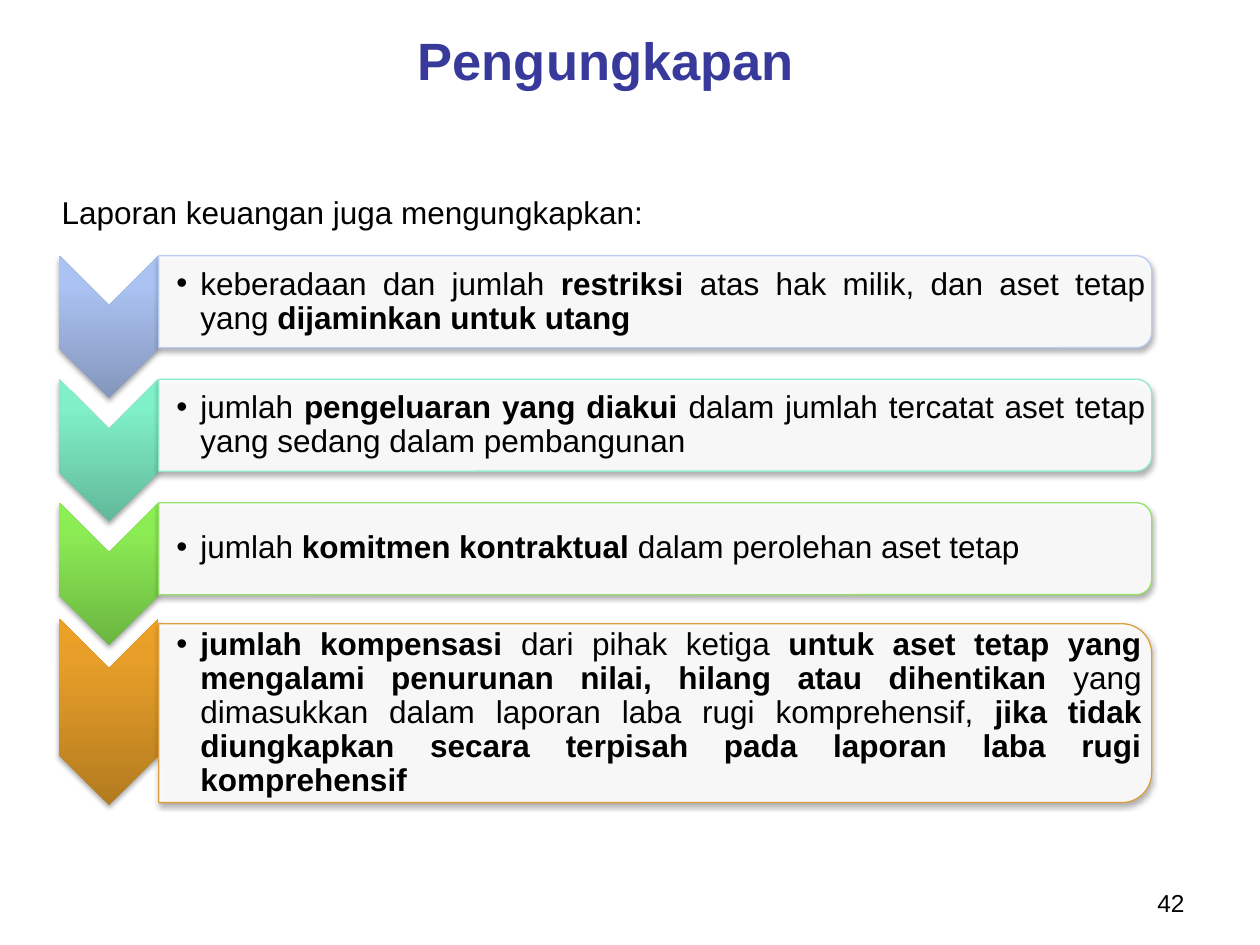
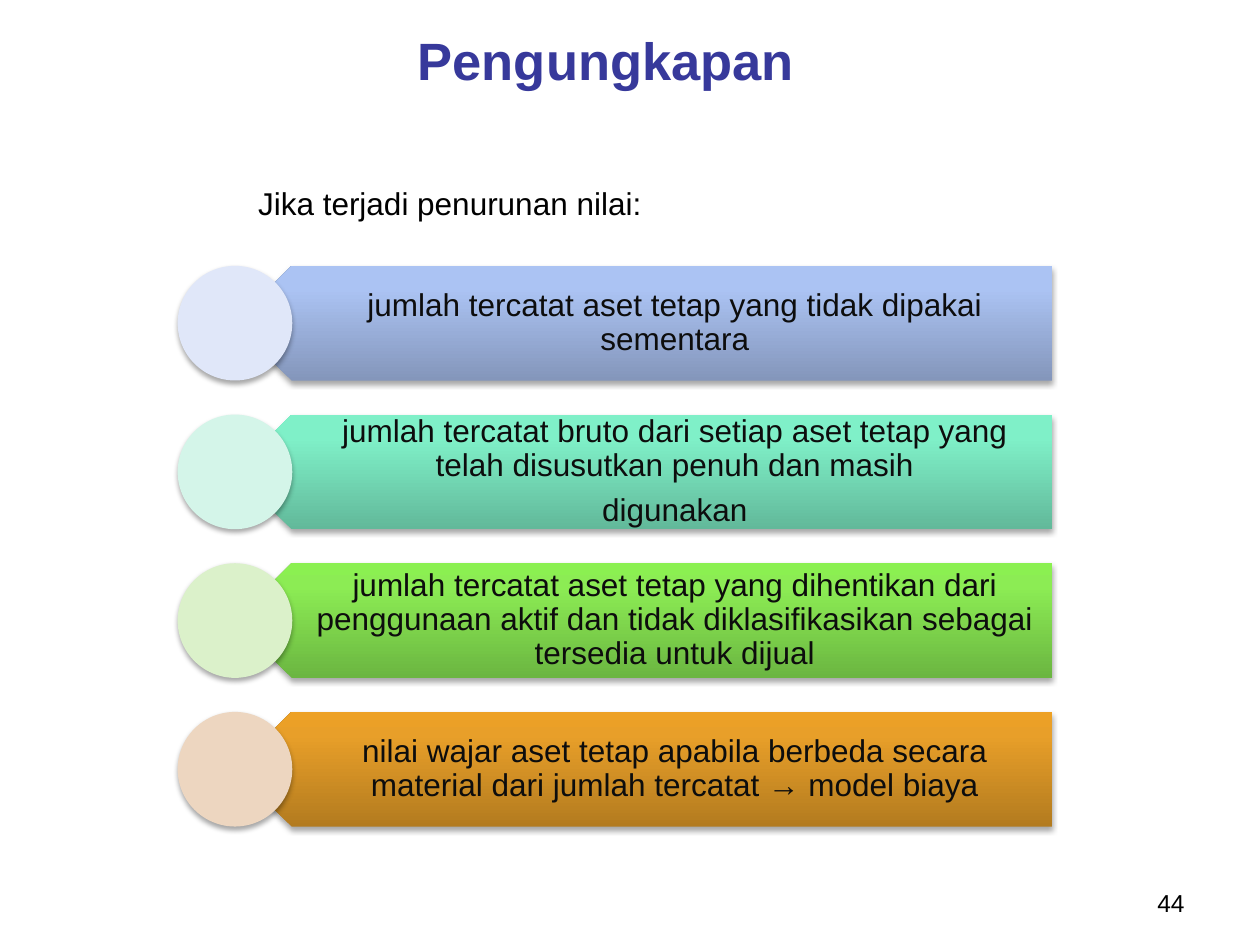
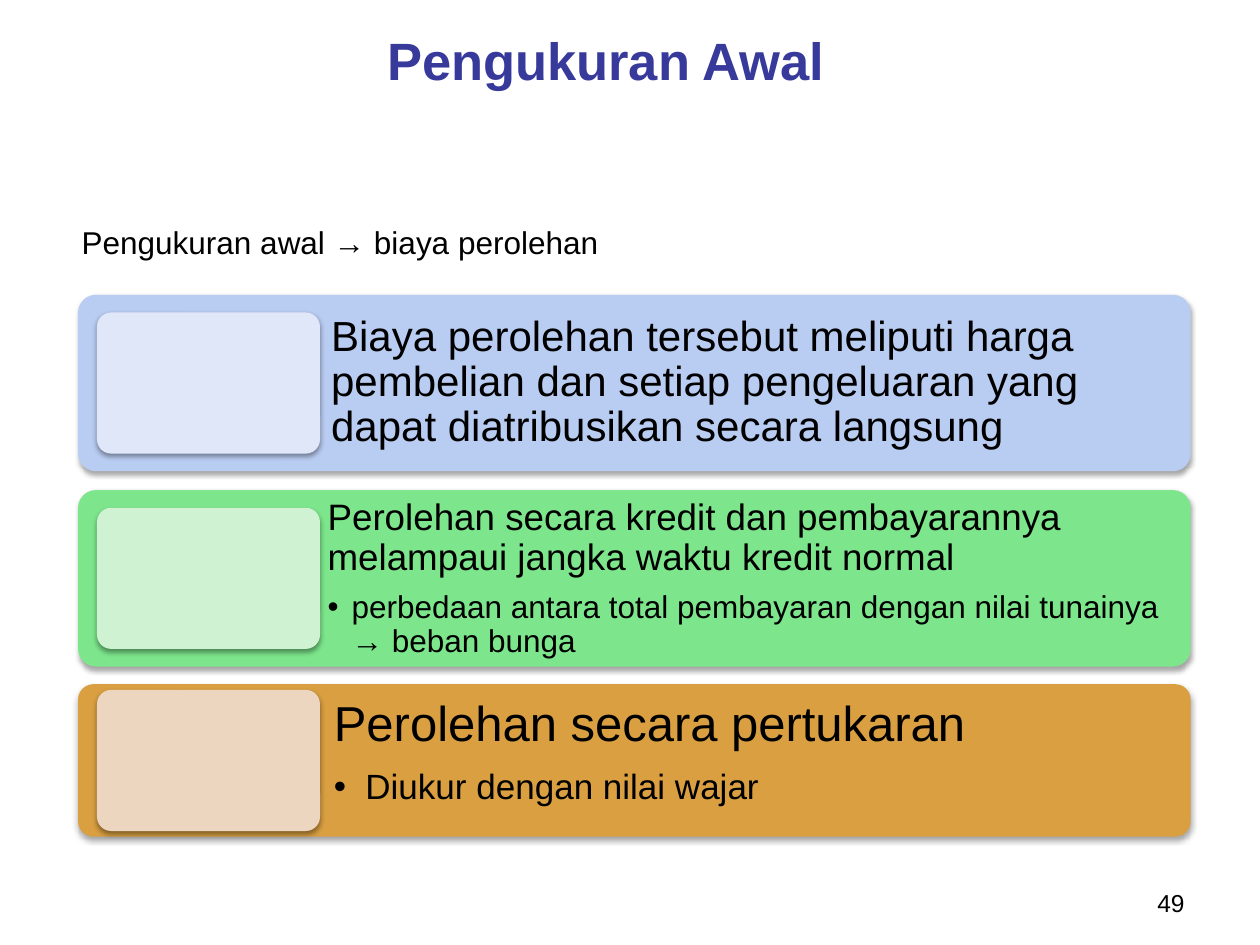
from lxml import etree
from pptx import Presentation
from pptx.dml.color import RGBColor
from pptx.enum.shapes import MSO_SHAPE
from pptx.enum.text import MSO_ANCHOR, MSO_AUTO_SIZE, PP_ALIGN
from pptx.oxml.ns import qn
from pptx.util import Inches, Pt

CHEVRON = MSO_SHAPE.CHEVRON
PANEL = MSO_SHAPE.ROUND_2_SAME_RECTANGLE
PENTAGON = MSO_SHAPE.PENTAGON
OVAL = MSO_SHAPE.OVAL
ROUNDED = MSO_SHAPE.ROUNDED_RECTANGLE
LEFT, CENTER, RIGHT, JUSTIFY = PP_ALIGN.LEFT, PP_ALIGN.CENTER, PP_ALIGN.RIGHT, PP_ALIGN.JUSTIFY
TOP, MIDDLE = MSO_ANCHOR.TOP, MSO_ANCHOR.MIDDLE
GROW = MSO_AUTO_SIZE.SHAPE_TO_FIT_TEXT

# Colours
FONT = "Arial"
BLACK = RGBColor(0, 0, 0)
WHITE = RGBColor(255, 255, 255)
INK = RGBColor(0x0D, 0x0D, 0x0D)
TITLE_BLUE = RGBColor(0x37, 0x39, 0x9B)
BLUE, MINT, LIME, ORANGE = [RGBColor.from_string(code) for code in
                            ("B9CCF2", "91EACB", "95E269", "D99F41")]
GREEN = RGBColor(0x7D, 0xE6, 0x8C)
PALE_BLUE, PALE_MINT, PALE_LIME, PALE_ORANGE = [
    RGBColor.from_string(code) for code in ("E0E7F9", "D4F5E9", "DBF1CA", "EDD6C0")]
PALE_GREEN = RGBColor(0xCF, 0xF3, 0xD2)
LINES = [BLUE, MINT, LIME, ORANGE]
PALES = [PALE_BLUE, PALE_MINT, PALE_LIME, PALE_ORANGE]

# Gradient colours from bottom to top
GRADIENT_STOPS = (0, 80, 100)
GRADIENTS = [
    [RGBColor.from_string(code) for code in codes] for codes in (
        ("8496BB", "ABC3F3", "AAC3F5"), ("62B99A", "7FF0C8", "7EF3CA"),
        ("6BB641", "8CEC54", "8BF051"), ("B37B1F", "E89F29", "EDA125"))]

SOFT_SHADOW = {"opacity": 35, "distance": 1.8}
TILE_SHADOW = {"opacity": 38, "distance": 1.6}

# Texts; words between asterisks are bold
DISCLOSURES = [
    "keberadaan dan jumlah *restriksi *atas hak milik, dan aset tetap yang "
    "*dijaminkan untuk utang*",
    "jumlah *pengeluaran yang diakui *dalam jumlah tercatat aset tetap yang "
    "sedang dalam pembangunan",
    "jumlah *komitmen kontraktual *dalam perolehan aset tetap",
    "*jumlah kompensasi *dari pihak ketiga *untuk aset tetap yang mengalami "
    "penurunan nilai, hilang atau dihentikan *yang dimasukkan dalam laporan laba "
    "rugi komprehensif, *jika tidak diungkapkan secara terpisah pada laporan laba "
    "rugi komprehensif*",
]
IMPAIRMENTS = [
    ["jumlah tercatat aset tetap yang tidak dipakai sementara"],
    ["jumlah tercatat bruto dari setiap aset tetap yang telah disusutkan penuh dan masih",
     "digunakan"],
    ["jumlah tercatat aset tetap yang dihentikan dari penggunaan aktif dan tidak "
     "diklasifikasikan sebagai tersedia untuk dijual"],
    ["nilai wajar aset tetap apabila berbeda secara material dari jumlah tercatat "
     "→ model biaya"],
]


def add_child(parent, tag, **attributes):
    child = etree.SubElement(parent, qn(tag))
    for name, value in attributes.items():
        child.set(name, str(value))
    return child


def add_shadow(shape, opacity, distance):
    effects = add_child(shape._element.spPr, "a:effectLst")
    shadow = add_child(effects, "a:outerShdw", blurRad=Pt(3.1), dist=Pt(distance),
                       dir=90 * 60000, rotWithShape=0)
    color = add_child(shadow, "a:srgbClr", val=BLACK)
    add_child(color, "a:alpha", val=opacity * 1000)


def fill_gradient(shape, colors):
    properties = shape._element.spPr
    gradient = etree.Element(qn("a:gradFill"), rotWithShape="0")
    stops = add_child(gradient, "a:gsLst")
    for position, color in zip(GRADIENT_STOPS, colors):
        stop = add_child(stops, "a:gs", pos=position * 1000)
        add_child(stop, "a:srgbClr", val=color)
    add_child(gradient, "a:lin", ang=270 * 60000, scaled=0)
    properties.find(qn("a:prstGeom")).addnext(gradient)


def add_figure(slide, kind, box, fill, rotation=0, line=None, shadow=SOFT_SHADOW):
    """Draw a shape that covers box (left, top, width, height) once rotated."""
    left, top, width, height = box
    if rotation == 90:
        left, top = left + (width - height) / 2, top + (height - width) / 2
        width, height = height, width
    shape = slide.shapes.add_shape(kind, Inches(left), Inches(top),
                                   Inches(width), Inches(height))
    shape.rotation = rotation
    if isinstance(fill, list):
        fill_gradient(shape, fill)
    else:
        shape.fill.solid()
        shape.fill.fore_color.rgb = fill
    if line is None:
        shape.line.fill.background()
    else:
        shape.line.color.rgb = line
        shape.line.width = Pt(0.75)
    add_shadow(shape, **shadow)
    return shape


def add_text_box(slide, box, insets=(0.1, 0.05, 0.1, 0.05), **formats):
    text_box = slide.shapes.add_textbox(*[Inches(length) for length in box])
    frame = text_box.text_frame
    sides = ("margin_left", "margin_top", "margin_right", "margin_bottom")
    values = dict(zip(sides, [Inches(inset) for inset in insets]))
    for name, value in {"word_wrap": True, **values, **formats}.items():
        setattr(frame, name, value)
    return frame


def add_paragraph(frame, text, size=18, color=BLACK, bold=False, indent=0, **formats):
    first = frame.paragraphs[0]
    paragraph = frame.add_paragraph() if first.runs else first
    if indent:
        paragraph.level = 1
        properties = paragraph._p.get_or_add_pPr()
        properties.set("marL", str(Inches(indent)))
        properties.set("indent", str(-Inches(indent)))
        add_child(properties, "a:buFont", typeface=FONT)
        add_child(properties, "a:buChar", char="•")
    for name, value in formats.items():
        setattr(paragraph, name, value)
    for index, part in enumerate(text.split("*")):
        if part:
            run = paragraph.add_run()
            run.text = part
            run.font.color.rgb = color
            values = {"name": FONT, "size": Pt(size), "bold": bold or index % 2 == 1}
            for name, value in values.items():
                setattr(run.font, name, value)


def add_body(frame, text, size=18, after=0.35, **formats):
    """Add a tight paragraph; after is the gap below it as a share of its size."""
    add_paragraph(frame, text, size, line_spacing=0.9, space_after=Pt(size * after), **formats)


def add_page(presentation, title, number, intro, intro_box):
    slide = presentation.slides.add_slide(presentation.slide_layouts[6])
    frame = add_text_box(slide, (0.31, 0.16, 9, 0.62), vertical_anchor=MIDDLE)
    add_paragraph(frame, title, 30, TITLE_BLUE, True, alignment=CENTER)
    frame = add_text_box(slide, (7.17, 7, 2.33, 0.35))
    add_paragraph(frame, number, 14, alignment=RIGHT)
    frame = add_text_box(slide, intro_box, auto_size=GROW)
    add_paragraph(frame, intro)
    return slide


def add_disclosure(slide, text, colors, line, chevron, panel, padding):
    """Place a down chevron and a panel, each given as (top, height)."""
    add_figure(slide, CHEVRON, (0.47, chevron[0], 0.79, chevron[1]), colors, 90)
    top, height = panel
    shape = add_figure(slide, PANEL, (1.26, top, 7.88, height), WHITE, 90, line)
    white = shape._element.spPr.find(qn("a:solidFill"))[0]
    add_child(white, "a:alpha", val=90000)
    frame = add_text_box(
        slide, (1.26, top + padding, 7.88 - padding, height - 2 * padding),
        (0.14, 0.01, 0.01, 0.01), vertical_anchor=MIDDLE)
    add_body(frame, text, after=0.15, indent=0.19, alignment=JUSTIFY)


def add_banner(slide, top, texts, colors, pale):
    size = 0.91
    add_figure(slide, PENTAGON, (1.86, top, 6.49, size), colors, 180)
    frame = add_text_box(slide, (2.09, top, 6.27, size), (0.4, 0.07, 0.14, 0.07),
                         vertical_anchor=MIDDLE)
    for text in texts:
        add_body(frame, text, color=INK, alignment=CENTER)
    add_figure(slide, OVAL, (1.41, top, size, size), pale)


def add_card(slide, top, height, color, pale, inset, anchor, heading, size, detail=None):
    """Place a card; detail is (text, size, indent) of the bullet below the heading."""
    tile_height = 1.12
    card = add_figure(slide, ROUNDED, (0.62, top, 8.83, height), color)
    frame = add_text_box(slide, (2.53, top, 6.92, height), (inset,) * 4,
                         vertical_anchor=anchor)
    add_body(frame, heading, size, alignment=LEFT)
    if detail:
        text, detail_size, indent = detail
        add_body(frame, text, detail_size, 0.15, indent=indent, alignment=LEFT)
    tile_top = top + (height - tile_height) / 2
    tile = add_figure(slide, ROUNDED, (0.77, tile_top, 1.77, tile_height), pale,
                      shadow=TILE_SHADOW)
    for shape in (card, tile):
        shape.adjustments[0] = 0.1


def main():
    presentation = Presentation()
    presentation.slide_width = Inches(10)
    presentation.slide_height = Inches(7.5)

    # Disclosures: three equal rows and a taller last one
    slide = add_page(presentation, "Pengungkapan", "42",
                     "Laporan keuangan juga mengungkapkan:", (0.39, 1.48, 5.55, 0.4))
    tops = [2.03 + 0.98 * row for row in range(3)]
    places = [((top, 1.13), (top, 0.73), 0.04) for top in tops]
    places.append(((4.91, 1.48), (4.95, 1.42), 0.07))
    for text, colors, line, place in zip(DISCLOSURES, GRADIENTS, LINES, places):
        add_disclosure(slide, text, colors, line, *place)

    # Impairment: four banners
    slide = add_page(presentation, "Pengungkapan", "44",
                     "Jika terjadi penurunan nilai:", (1.95, 1.41, 4.84, 0.4))
    for row, (texts, colors, pale) in enumerate(zip(IMPAIRMENTS, GRADIENTS, PALES)):
        add_banner(slide, 2.11 + 1.18 * row, texts, colors, pale)

    # Initial measurement: three cards
    slide = add_page(presentation, "Pengukuran Awal", "49",
                     "Pengukuran awal → biaya perolehan", (0.55, 1.72, 4.38, 0.4))
    add_card(slide, 2.34, 1.4, BLUE, PALE_BLUE, 0.1, MIDDLE,
             "Biaya perolehan tersebut meliputi harga pembelian dan setiap "
             "pengeluaran yang dapat diatribusikan secara langsung", 24)
    add_card(slide, 3.89, 1.4, GREEN, PALE_GREEN, 0.07, TOP,
             "Perolehan secara kredit dan pembayarannya melampaui jangka waktu "
             "kredit normal", 21,
             ("perbedaan antara total pembayaran dengan nilai tunainya → beban bunga",
              18, 0.19))
    add_card(slide, 5.43, 1.21, ORANGE, PALE_ORANGE, 0.12, TOP,
             "Perolehan secara pertukaran", 28, ("Diukur dengan nilai wajar", 20, 0.25))

    presentation.save("out.pptx")


if __name__ == "__main__":
    main()
